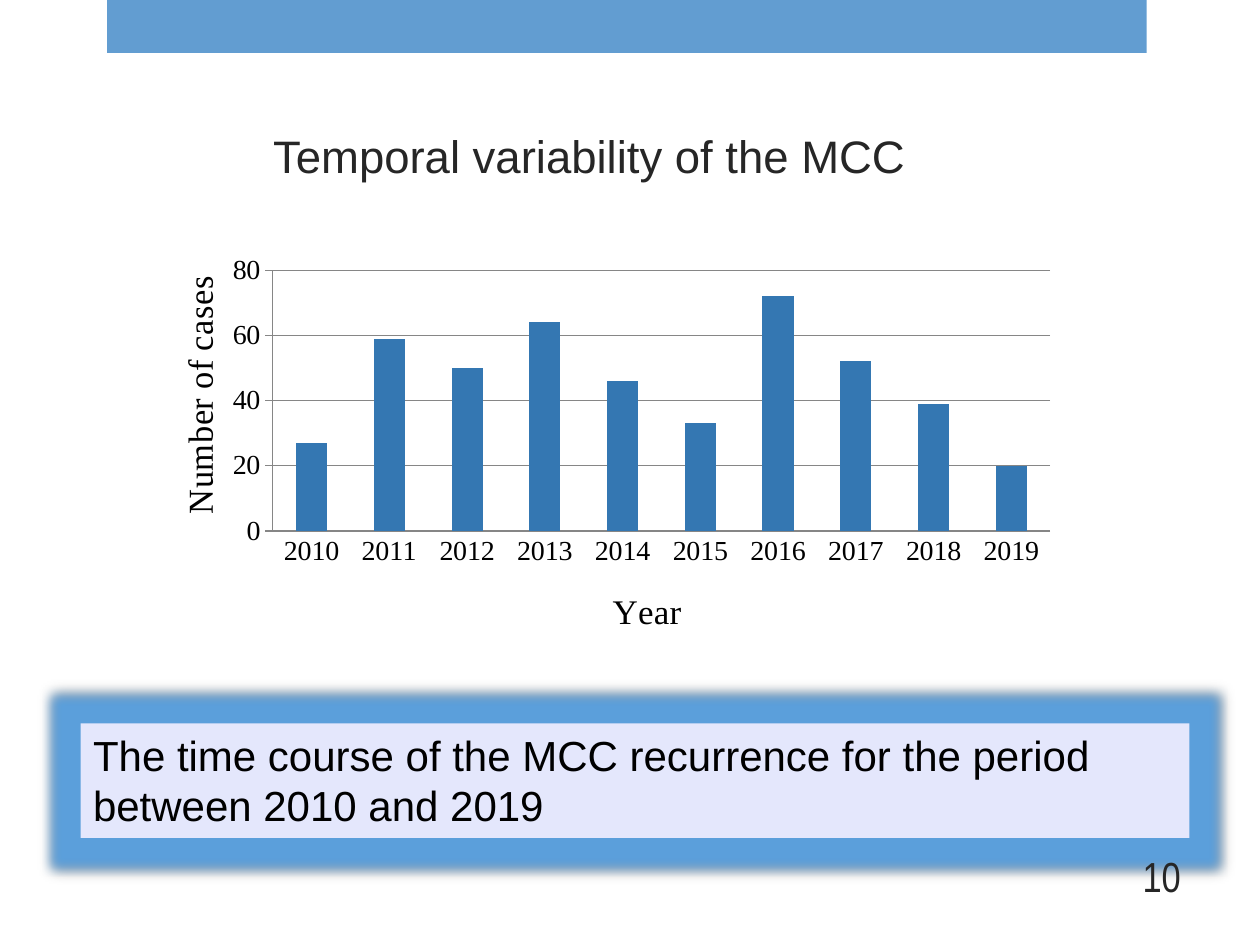
from lxml import etree
from pptx import Presentation
from pptx.chart.data import CategoryChartData
from pptx.dml.color import RGBColor
from pptx.enum.chart import XL_CHART_TYPE, XL_TICK_MARK
from pptx.enum.shapes import MSO_SHAPE
from pptx.enum.text import MSO_ANCHOR, PP_ALIGN
from pptx.oxml import parse_xml
from pptx.oxml.ns import nsdecls, qn
from pptx.util import Inches, Pt

BAND = RGBColor(0x62, 0x9D, 0xD1)
BAR = RGBColor(0x34, 0x77, 0xB2)
PANEL = RGBColor(0xE4, 0xE7, 0xFC)
DARK = RGBColor(0x26, 0x26, 0x26)
BLACK = RGBColor(0, 0, 0)
GRID = RGBColor(0x86, 0x86, 0x86)
SERIF = "Times New Roman"

# Content
TITLE = "Temporal variability of the MCC"
CAPTION = "The time course of the MCC recurrence for the period between 2010 and 2019"
PAGE = "10"
CASES = [27, 59, 50, 64, 46, 33, 72, 52, 39, 20]
YEARS = [str(2010 + i) for i in range(len(CASES))]
BANDS = [(0.85, 0, 8.25, 0.42), (0.85, 6.75, 8.25, 0.03)]
PLOT = {"x": 0.153, "y": 0.06, "w": 0.825, "h": 0.671}

prs = Presentation()
prs.slide_width, prs.slide_height = Inches(10), Inches(7.5)
s = prs.slides.add_slide(prs.slide_layouts[6])


def add_rect(box, color):
    sp = s.shapes.add_shape(MSO_SHAPE.RECTANGLE, *map(Inches, box))
    sp.shadow.inherit = False
    sp.fill.solid()
    sp.fill.fore_color.rgb = color
    sp.line.fill.background()
    return sp


def set_font(font, **values):
    color = values.pop("color", BLACK)
    for name, value in values.items():
        setattr(font, name, value)
    font.color.rgb = color


def write(sp, text, align, anchor, **font):
    tf = sp.text_frame
    tf.word_wrap = True
    tf.vertical_anchor = anchor
    p = tf.paragraphs[0]
    p.alignment = align
    r = p.add_run()
    r.text = text
    set_font(r.font, **font)


def manual_layout(inner, **places):
    """Layout element with places given as fractions of the chart."""
    layout = etree.Element(qn("c:layout"))
    manual = etree.SubElement(layout, qn("c:manualLayout"))
    if inner:
        etree.SubElement(manual, qn("c:layoutTarget"), val="inner")
    for key in ("x", "y"):
        etree.SubElement(manual, qn(f"c:{key}Mode"), val="edge")
    for key, value in places.items():
        etree.SubElement(manual, qn(f"c:{key}"), val=str(value))
    return layout


# Bands and title
for box in BANDS:
    add_rect(box, BAND)
title = s.shapes.add_textbox(*map(Inches, (0.21, 0, 8.94, 1.5)))
write(title, TITLE, PP_ALIGN.CENTER, MSO_ANCHOR.BOTTOM,
      name="Arial", size=Pt(26), color=DARK)

# Chart
data = CategoryChartData()
data.categories = YEARS
data.add_series("Series 1", CASES)
chart = s.shapes.add_chart(XL_CHART_TYPE.COLUMN_CLUSTERED,
                           *map(Inches, (1.02, 1.96, 7.48, 3.14)), data).chart
chart.has_legend = False
chart.has_title = False
set_font(chart.font, name=SERIF, size=Pt(10))
plot = chart.plots[0]
plot.gap_width = 150
plot.vary_by_categories = False
bars = plot.series[0].format.fill
bars.solid()
bars.fore_color.rgb = BAR

AXES = [
    (chart.category_axis, "Year", XL_TICK_MARK.NONE, {"x": 0.507, "y": 0.865}),
    (chart.value_axis, "Number of cases", XL_TICK_MARK.OUTSIDE, {"x": 0.045, "y": 0.07}),
]
for axis, text, tick, place in AXES:
    axis.major_tick_mark = tick
    axis.minor_tick_mark = XL_TICK_MARK.NONE
    set_font(axis.tick_labels.font, name=SERIF, size=Pt(16))
    axis.format.line.color.rgb = GRID
    p = axis.axis_title.text_frame.paragraphs[0]
    r = p.add_run()
    r.text = text
    set_font(r.font, name=SERIF, size=Pt(20), bold=False)
    heading = axis.axis_title._element
    for old in heading.findall(qn("c:layout")):
        heading.remove(old)
    heading.find(qn("c:tx")).addnext(manual_layout(False, **place))

value_axis = chart.value_axis
for name, value in {"minimum_scale": 0, "maximum_scale": 80, "major_unit": 20,
                    "has_major_gridlines": True}.items():
    setattr(value_axis, name, value)
value_axis.major_gridlines.format.line.color.rgb = GRID

area = chart._chartSpace.chart.plotArea
for old in area.findall(qn("c:layout")):
    area.remove(old)
area.insert(0, manual_layout(True, **PLOT))

# Caption panel with a blue glow and a soft shadow
panel = add_rect((0.64, 5.74, 8.8, 0.91), PANEL)
write(panel, CAPTION, PP_ALIGN.LEFT, MSO_ANCHOR.TOP, name="Arial", size=Pt(24))
effects = panel._element.spPr.find(qn("a:effectLst"))
for xml in (
    f'<a:glow {nsdecls("a")} rad="{Pt(11)}"><a:srgbClr val="5B9FDB"/></a:glow>',
    f'<a:outerShdw {nsdecls("a")} blurRad="{Pt(5)}" dist="0" dir="0">'
    '<a:srgbClr val="000000"><a:alpha val="40000"/></a:srgbClr></a:outerShdw>',
):
    effects.append(parse_xml(xml))

# Page number
number = s.shapes.add_textbox(*map(Inches, (8.64, 6.75, 0.83, 0.4)))
write(number, PAGE, PP_ALIGN.RIGHT, MSO_ANCHOR.MIDDLE,
      name="Arial Narrow", size=Pt(24), color=DARK)

prs.save("out.pptx")
